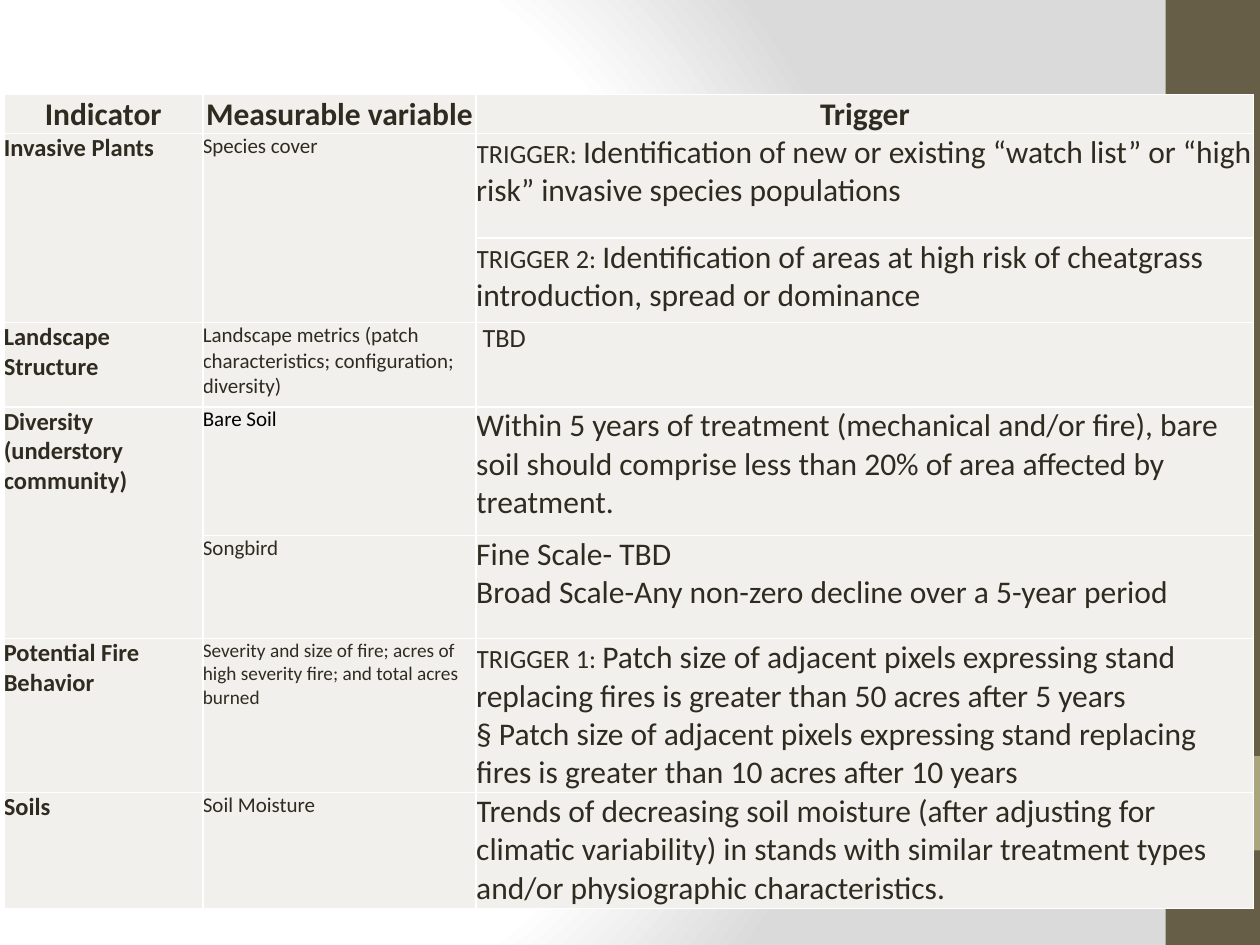
from lxml import etree
from pptx import Presentation
from pptx.dml.color import RGBColor
from pptx.enum.shapes import MSO_SHAPE
from pptx.enum.text import MSO_ANCHOR, PP_ALIGN
from pptx.oxml import parse_xml
from pptx.oxml.ns import nsdecls, qn
from pptx.util import Inches, Pt

RECT = MSO_SHAPE.RECTANGLE
TOP, BOTTOM = MSO_ANCHOR.TOP, MSO_ANCHOR.BOTTOM
LEFT, CENTER = PP_ALIGN.LEFT, PP_ALIGN.CENTER

FONT = "Calibri"
INK, BLACK, WHITE = "2F2B20", "000000", "FFFFFF"
CELL, BROWN, OLIVE, GREY = "F1F0EC", "675E47", "A9A57C", "DADADA"

COLS = [1.58, 2.17, 6.17]
ROWS = [0.31, 0.83, 0.67, 0.67, 1.02, 0.82, 1.22, 0.92]
HEADERS = ["Indicator", "Measurable variable", "Trigger"]
INDICATORS = {
    1: "Invasive Plants",
    3: "Landscape Structure",
    4: "Diversity (understory community)",
    6: "Potential Fire Behavior",
    7: "Soils",
}
VARIABLES = {
    1: ("Species cover", 12, INK),
    3: ("Landscape metrics (patch characteristics; configuration; diversity)", 12, INK),
    4: ("Bare Soil", 12, BLACK),
    5: ("Songbird", 12, INK),
    6: ("Severity and size of fire; acres of high severity fire; and total acres burned", 11, INK),
    7: ("Soil Moisture", 12, INK),
}
TRIGGERS = {
    1: [[("TRIGGER: ", 15),
         ("Identification of new or existing “watch list” or “high risk” invasive species populations", 18)]],
    2: [[("TRIGGER 2: ", 15),
         ("Identification of areas at high risk of cheatgrass introduction, spread or dominance", 18)]],
    3: [[("TBD", 15)]],
    4: [[("Within 5 years of treatment (mechanical and/or fire), bare soil should comprise "
          "less than 20% of area affected by treatment.", 18)]],
    5: [[("Fine Scale- TBD", 18)],
        [("Broad Scale-Any non-zero decline over a 5-year period", 18)]],
    6: [[("TRIGGER 1: ", 15),
         ("Patch size of adjacent pixels expressing stand replacing fires is greater than "
          "50 acres after 5 years", 18)],
        [("§ Patch size of adjacent pixels expressing stand replacing fires is greater than "
          "10 acres after 10 years", 18)]],
    7: [[("Trends of decreasing soil moisture (after adjusting for climatic variability) in stands "
          "with similar treatment types and/or physiographic characteristics.", 18)]],
}


def rgb(value):
    return RGBColor.from_string(value)


class SlideBuilder:
    def __init__(self, slide):
        self.s = slide

    def background(self):
        stops = "".join(
            f'<a:gs pos="{pos * 1000}"><a:srgbClr val="{color}"/></a:gs>'
            for pos, color in [(0, WHITE), (75, WHITE), (100, GREY)])
        bg = parse_xml(
            f'<p:bg {nsdecls("p", "a")}><p:bgPr><a:gradFill rotWithShape="1">'
            f'<a:gsLst>{stops}</a:gsLst><a:path path="circle">'
            '<a:fillToRect l="20000" t="50000" r="100000" b="50000"/></a:path>'
            '</a:gradFill><a:effectLst/></p:bgPr></p:bg>')
        self.s.element.cSld.insert(0, bg)

    def bar(self, top, height, color):
        sp = self.s.shapes.add_shape(RECT, Inches(9.25), Inches(top), Inches(0.75), Inches(height))
        sp.shadow.inherit = False
        sp.fill.solid()
        sp.fill.fore_color.rgb = rgb(color)
        sp.line.fill.background()

    def table(self, left, top, cols, rows):
        frame = self.s.shapes.add_table(len(rows), len(cols), Inches(left), Inches(top),
                                        Inches(sum(cols)), Inches(sum(rows)))
        table = frame.table
        table.first_row = table.horz_banding = False
        for column, width in zip(table.columns, cols):
            column.width = Inches(width)
        for row, height in zip(table.rows, rows):
            row.height = Inches(height)
        for cell in table.iter_cells():
            self.style_cell(cell)
        return table

    def style_cell(self, cell):
        cell.margin_left = cell.margin_right = cell.margin_top = cell.margin_bottom = 0
        tcPr = cell._tc.get_or_add_tcPr()
        for side in ("a:lnL", "a:lnR", "a:lnT", "a:lnB"):
            ln = etree.SubElement(tcPr, qn(side), w=str(Pt(1)))
            fill = etree.SubElement(ln, qn("a:solidFill"))
            etree.SubElement(fill, qn("a:srgbClr"), val=WHITE)
        cell.fill.solid()
        cell.fill.fore_color.rgb = rgb(CELL)

    def cell_text(self, cell, paragraphs, bold=False, color=INK, align=LEFT, anchor=TOP):
        cell.vertical_anchor = anchor
        tf = cell.text_frame
        for i, runs in enumerate(paragraphs):
            p = tf.add_paragraph() if i else tf.paragraphs[0]
            p.alignment = align
            for text, size in runs:
                r = p.add_run()
                r.text = text
                r.font.name = FONT
                r.font.size = Pt(size)
                r.font.bold = bold
                r.font.color.rgb = rgb(color)


def main():
    prs = Presentation()
    prs.slide_width, prs.slide_height = Inches(10), Inches(7.5)
    b = SlideBuilder(prs.slides.add_slide(prs.slide_layouts[6]))
    b.background()
    b.bar(0, 7.5, BROWN)
    b.bar(6, 0.75, OLIVE)

    table = b.table(0.03, 0.75, COLS, ROWS)
    for row, col in [(1, 0), (1, 1), (4, 0)]:
        table.cell(row, col).merge(table.cell(row + 1, col))
    for col, text in enumerate(HEADERS):
        b.cell_text(table.cell(0, col), [[(text, 18)]], bold=True, align=CENTER, anchor=BOTTOM)
    for row, text in INDICATORS.items():
        b.cell_text(table.cell(row, 0), [[(text, 14)]], bold=True)
    for row, (text, size, color) in VARIABLES.items():
        b.cell_text(table.cell(row, 1), [[(text, size)]], color=color)
    for row, paragraphs in TRIGGERS.items():
        b.cell_text(table.cell(row, 2), paragraphs)
    table.cell(3, 2).margin_left = Inches(0.05)

    prs.save("out.pptx")


if __name__ == "__main__":
    main()
